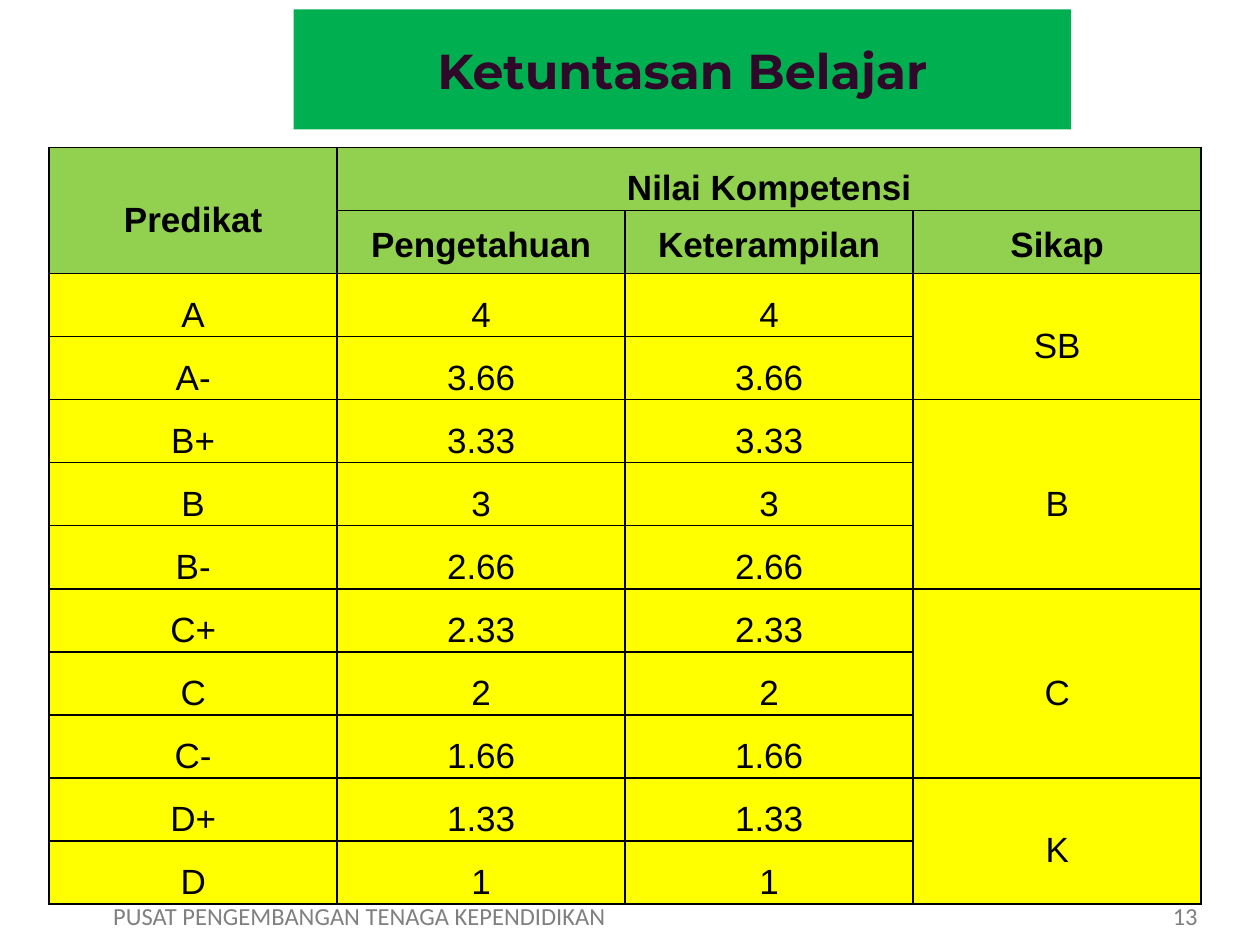
from dataclasses import dataclass
from lxml.etree import SubElement
from pptx import Presentation
from pptx.dml.color import RGBColor
from pptx.enum.shapes import MSO_SHAPE
from pptx.enum.text import MSO_ANCHOR, PP_ALIGN
from pptx.oxml.ns import qn
from pptx.util import Inches, Pt


@dataclass(frozen=True)
class Theme:
    banner: str = "00B050"
    head: str = "92D050"
    body: str = "FFFF00"
    line: str = "000000"
    title: tuple = ("Montserrat", 28, True, "300829")
    label: tuple = ("Arial", 20, True, "000000")
    value: tuple = ("Arial", 20, False, "000000")
    foot: tuple = ("Calibri", 14, False, "808080")


THEME = Theme()
WIDE, HIGH = Inches(10), Inches(7.5)
ROW, COL = Inches(0.5), WIDE * 0.2286
LOOSE = {"line_spacing": 1.5, "space_after": Pt(6)}
TIGHT = {"line_spacing": 1.15, "space_after": Pt(10)}
HEADS = [
    ["Predikat", "Nilai Kompetensi", "", ""],
    ["", "Pengetahuan", "Keterampilan", "Sikap"],
]
GRADES = [
    ("A", "4"), ("A-", "3.66"),
    ("B+", "3.33"), ("B", "3"), ("B-", "2.66"),
    ("C+", "2.33"), ("C", "2"), ("C-", "1.66"),
    ("D+", "1.33"), ("D", "1"),
]
BANDS = [("SB", 2), ("B", 3), ("C", 3), ("K", 2)]


def assign(item, values):
    for key, value in values.items():
        setattr(item, key, value)


def paint(item, color):
    item.fill.solid()
    item.fill.fore_color.rgb = RGBColor.from_string(color)


def write(frame, text, style, align=PP_ALIGN.CENTER, **spacing):
    para = frame.paragraphs[0]
    assign(para, {"alignment": align, **spacing})
    run = para.add_run()
    run.text = text
    name, size, bold, color = style
    assign(run.font, {"name": name, "size": Pt(size), "bold": bold})
    run.font.color.rgb = RGBColor.from_string(color)


def border(cell):
    props = cell._tc.get_or_add_tcPr()
    for spot, side in enumerate(("lnL", "lnR", "lnT", "lnB")):
        line = SubElement(props, qn(f"a:{side}"), w=str(Pt(1)))
        props.remove(line)
        props.insert(spot, line)
        fill = SubElement(line, qn("a:solidFill"))
        SubElement(fill, qn("a:srgbClr"), val=THEME.line)


def add_title(slide, text):
    box = slide.shapes.add_shape(
        MSO_SHAPE.RECTANGLE, int(WIDE * 0.233), int(HIGH * 0.01),
        int(WIDE * 0.617), int(HIGH * 0.127))
    box.shadow.inherit = False
    box.line.fill.background()
    paint(box, THEME.banner)
    assign(box.text_frame, {"word_wrap": True, "vertical_anchor": MSO_ANCHOR.MIDDLE})
    write(box.text_frame, text, THEME.title)


def add_foot(slide, text, left, width, align):
    box = slide.shapes.add_textbox(
        int(WIDE * left), int(HIGH * 0.947), int(WIDE * width), int(HIGH * 0.045))
    box.text_frame.word_wrap = False
    write(box.text_frame, text, THEME.foot, align)


def add_grid(slide):
    rows = HEADS + [[mark, score, score, ""] for mark, score in GRADES]
    spans = [(0, 0, 2, 1), (0, 1, 1, 3)]
    top = len(HEADS)
    for mark, count in BANDS:
        rows[top][3] = mark
        spans.append((top, 3, count, 1))
        top += count
    shape = slide.shapes.add_table(
        len(rows), 4, int(WIDE * 0.039), int(HIGH * 0.156),
        int(COL * 4), ROW * len(rows))
    grid = shape.table
    assign(grid, {"first_row": False, "horz_banding": False})
    for row in grid.rows:
        row.height = ROW
    for col in grid.columns:
        col.width = int(COL)
    for r, row in enumerate(rows):
        head = r < len(HEADS)
        for c, text in enumerate(row):
            cell = grid.cell(r, c)
            assign(cell, {
                "vertical_anchor": MSO_ANCHOR.MIDDLE,
                "margin_left": Inches(0.07), "margin_right": Inches(0.07),
                "margin_top": 0, "margin_bottom": 0,
            })
            paint(cell, THEME.head if head else THEME.body)
            border(cell)
            if text:
                write(cell.text_frame, text, THEME.label if head else THEME.value,
                      **(TIGHT if r == 1 else LOOSE))
    for r, c, down, across in spans:
        grid.cell(r, c).merge(grid.cell(r + down - 1, c + across - 1))


def main():
    deck = Presentation()
    assign(deck, {"slide_width": WIDE, "slide_height": HIGH})
    slide = deck.slides.add_slide(deck.slide_layouts[6])
    add_foot(slide, "PUSAT PENGEMBANGAN TENAGA KEPENDIDIKAN", 0.08, 0.414, PP_ALIGN.LEFT)
    add_foot(slide, "13", 0.921, 0.043, PP_ALIGN.LEFT)
    add_grid(slide)
    add_title(slide, "Ketuntasan Belajar")
    deck.save("out.pptx")


if __name__ == "__main__":
    main()
